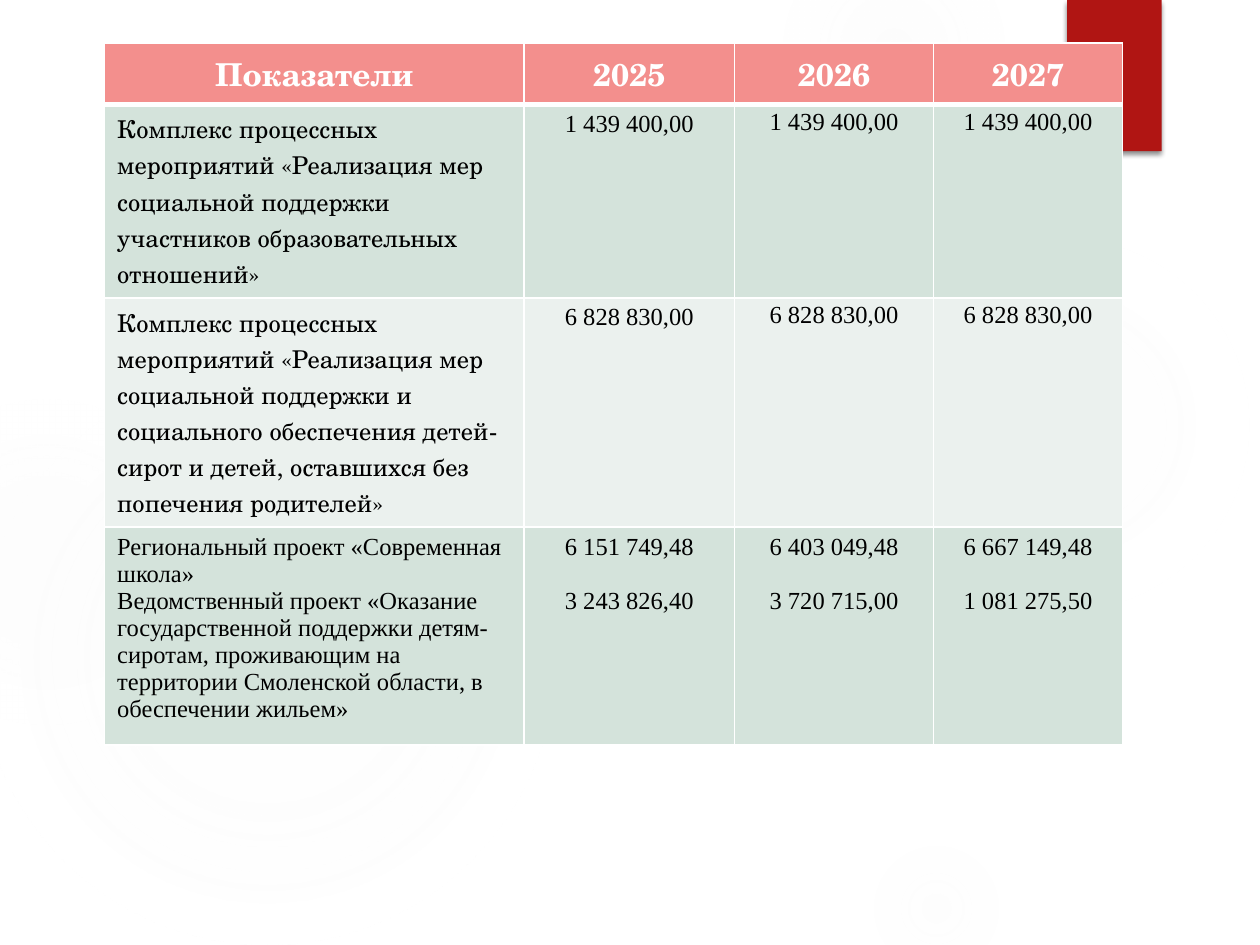
from lxml import etree
from pptx import Presentation
from pptx.dml.color import RGBColor
from pptx.enum.shapes import MSO_SHAPE
from pptx.enum.text import PP_ALIGN
from pptx.oxml import parse_xml
from pptx.oxml.ns import qn
from pptx.util import Inches, Pt

CENTER, LEFT = PP_ALIGN.CENTER, PP_ALIGN.LEFT
OVAL, RECTANGLE = MSO_SHAPE.OVAL, MSO_SHAPE.RECTANGLE
DRAWING_NS = "http://schemas.openxmlformats.org/drawingml/2006/main"

COLORS = {"white": "FFFFFF", "black": "000000", "glow": "F3F3F3", "ribbon": "B01513",
          "header": "F38F8D", "band": "D4E3DB", "light": "EBF1EE"}
SCHOLA, TIMES = "TeX Gyre Schola", "Times New Roman"

# left, top, diameter, (position %, opacity %) stops
GLOWS = [
    (6.89, 1.83, 3.08, [(0, 7), (36, 6), (69, 0)]),
    (6.22, -0.5, 1.75, [(0, 14), (36, 7), (73, 0)]),
    (6.89, 6.67, 1.08, [(0, 9), (36, 5), (66, 0)]),
    (-0.17, 2.92, 4.58, [(0, 11), (36, 10), (75, 0)]),
    (-0.92, 3.17, 2.58, [(0, 8), (36, 8), (72, 0)]),
]

HEADINGS = ["Показатели", "2025", "2026", "2027"]
COLUMN_WIDTHS = [3.33, 1.67, 1.58, 1.5]
ROW_HEIGHTS = [0.49, 1.53, 1.82, 1.73]
PROGRAMMES = [
    ("Комплекс процессных мероприятий «Реализация мер социальной поддержки "
     "участников образовательных отношений»", "1 439 400,00", "band"),
    ("Комплекс процессных мероприятий «Реализация мер социальной поддержки и "
     "социального обеспечения детей-сирот и детей, оставшихся без попечения родителей»",
     "6 828 830,00", "light"),
]
PROJECTS = [
    ["Региональный проект «Современная школа»",
     "Ведомственный проект «Оказание государственной поддержки детям-сиротам, "
     "проживающим на территории Смоленской области, в обеспечении жильем»"],
    ["6 151 749,48", "3 243 826,40"],
    ["6 403 049,48", "3 720 715,00"],
    ["6 667 149,48", "1 081 275,50"],
]


def rgb(name):
    return RGBColor.from_string(COLORS[name])


class SlideBuilder:
    def __init__(self, slide):
        self.slide = slide

    def shape(self, kind, left, top, width, height):
        shape = self.slide.shapes.add_shape(
            kind, Inches(left), Inches(top), Inches(width), Inches(height))
        shape.shadow.inherit = False
        shape.line.fill.background()
        return shape

    def glow(self, left, top, diameter, stops):
        circle = self.shape(OVAL, left, top, diameter, diameter)
        stop_xml = "".join(
            f'<a:gs pos="{position * 1000}"><a:srgbClr val="{COLORS["glow"]}">'
            f'<a:alpha val="{opacity * 1000}"/></a:srgbClr></a:gs>'
            for position, opacity in stops)
        gradient = parse_xml(
            f'<a:gradFill xmlns:a="{DRAWING_NS}"><a:gsLst>{stop_xml}</a:gsLst>'
            '<a:path path="circle"><a:fillToRect l="50000" t="50000" r="50000" b="50000"/>'
            '</a:path></a:gradFill>')
        circle._element.spPr.find(qn("a:prstGeom")).addnext(gradient)

    def ribbon(self, left, top, width, height):
        ribbon = self.shape(RECTANGLE, left, top, width, height)
        ribbon.fill.solid()
        ribbon.fill.fore_color.rgb = rgb("ribbon")
        effects = ribbon._element.spPr.find(qn("a:effectLst"))
        effects.append(parse_xml(
            f'<a:outerShdw xmlns:a="{DRAWING_NS}" blurRad="{Pt(3)}" dist="{Pt(2)}" '
            f'dir="5400000" rotWithShape="0"><a:srgbClr val="{COLORS["black"]}">'
            '<a:alpha val="45000"/></a:srgbClr></a:outerShdw>'))

    def table(self, left, top, widths, heights):
        table = self.slide.shapes.add_table(
            len(heights), len(widths), Inches(left), Inches(top),
            Inches(sum(widths)), Inches(sum(heights))).table
        for column, width in zip(table.columns, widths):
            column.width = Inches(width)
        for row, height in zip(table.rows, heights):
            row.height = Inches(height)
        return table

    def cell(self, cell, lines, fill, font=TIMES, size=14, color="black", bold=False,
             align=CENTER, bottom=1, gap=0, tight=False):
        properties = cell._tc.get_or_add_tcPr()
        for side, width in (("L", 1), ("R", 1), ("T", 1), ("B", bottom)):
            border = etree.SubElement(properties, qn(f"a:ln{side}"), w=str(Pt(width)))
            solid = etree.SubElement(border, qn("a:solidFill"))
            etree.SubElement(solid, qn("a:srgbClr"), val=COLORS["white"])
        cell.fill.solid()
        cell.fill.fore_color.rgb = rgb(fill)
        if tight:
            cell.margin_left = cell.margin_right = cell.margin_top = cell.margin_bottom = 0
        cell.text = "\n".join(lines)
        for index, paragraph in enumerate(cell.text_frame.paragraphs):
            paragraph.alignment = align
            if tight:
                paragraph.line_spacing = 1.15
            if index and gap:
                paragraph.space_before = Pt(gap)
            paragraph.font.name = font
            paragraph.font.size = Pt(size)
            paragraph.font.bold = bold
            paragraph.font.color.rgb = rgb(color)


def main():
    presentation = Presentation()
    presentation.slide_width, presentation.slide_height = Inches(10), Inches(7.5)
    builder = SlideBuilder(presentation.slides.add_slide(presentation.slide_layouts[6]))

    # Background glows and corner ribbon
    for glow in GLOWS:
        builder.glow(*glow)
    builder.ribbon(8.47, 0, 0.75, 1.2)

    # Header row
    budget = builder.table(0.83, 0.34, COLUMN_WIDTHS, ROW_HEIGHTS)
    for column, heading in enumerate(HEADINGS):
        builder.cell(budget.cell(0, column), [heading], "header", font=SCHOLA, size=18,
                     color="white", bold=True, bottom=3)

    # Programmes with the same amount every year
    for row, (programme, amount, fill) in enumerate(PROGRAMMES, start=1):
        builder.cell(budget.cell(row, 0), [programme], fill, font=SCHOLA, align=LEFT)
        for column in range(1, len(HEADINGS)):
            builder.cell(budget.cell(row, column), [amount], fill, tight=column > 1)

    # Projects, two to a cell
    for column, lines in enumerate(PROJECTS):
        is_name = column == 0
        builder.cell(budget.cell(3, column), lines, "band",
                     align=LEFT if is_name else CENTER, gap=0 if is_name else 15.5)

    presentation.save("out.pptx")


if __name__ == "__main__":
    main()
